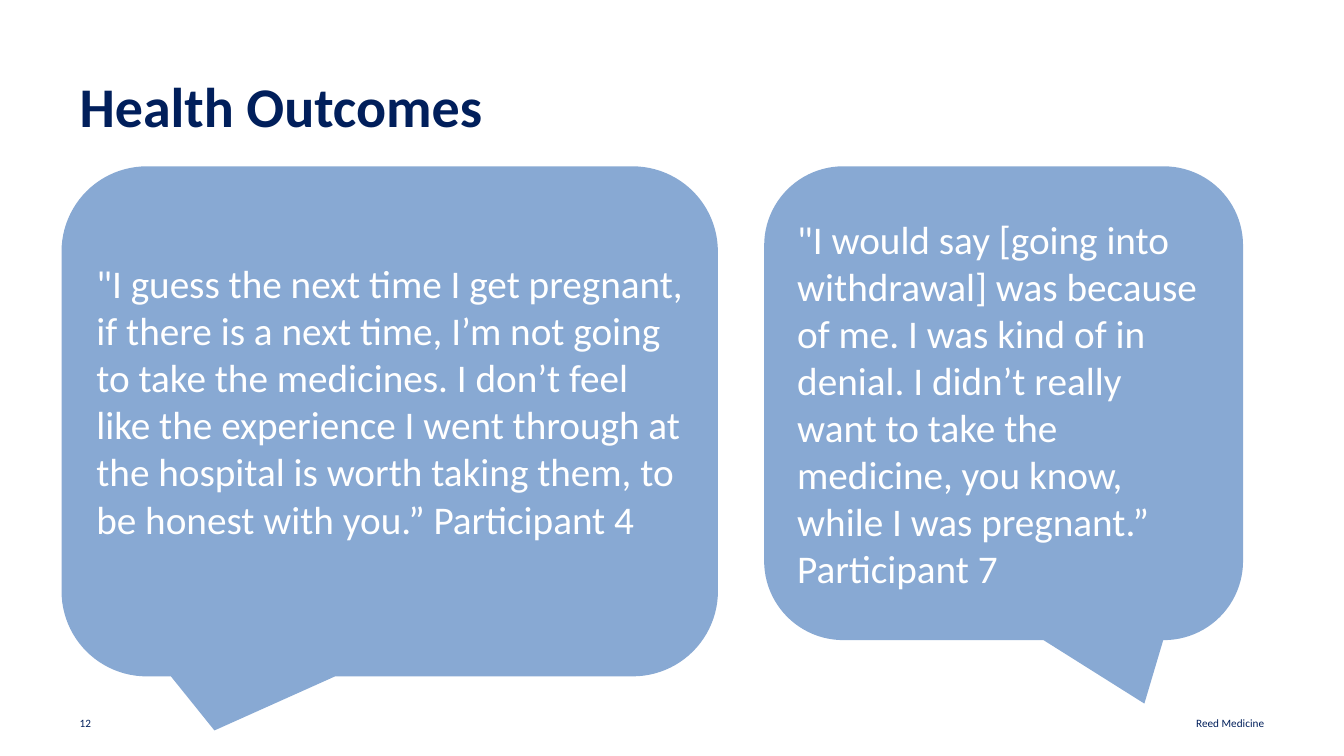
from dataclasses import dataclass

from pptx import Presentation
from pptx.dml.color import RGBColor
from pptx.enum.shapes import MSO_SHAPE
from pptx.enum.text import MSO_ANCHOR, PP_ALIGN
from pptx.shapes.autoshape import Shape
from pptx.slide import Slide
from pptx.util import Inches, Pt

# Grid: 100 columns by 100 rows over the whole slide
SLIDE_WIDTH = Inches(13.33)
SLIDE_HEIGHT = Inches(7.5)
COLUMN = SLIDE_WIDTH / 100
ROW = SLIDE_HEIGHT / 100


@dataclass(frozen=True)
class Theme:
    font: str = "Calibri"
    navy: RGBColor = RGBColor(0x01, 0x1F, 0x5B)
    bubble: RGBColor = RGBColor(0x88, 0xA9, 0xD3)
    white: RGBColor = RGBColor(0xFF, 0xFF, 0xFF)
    title_size: int = 40
    quote_size: int = 28
    footer_size: int = 8


@dataclass(frozen=True)
class Area:
    column: float
    row: float
    columns: float
    rows: float

    def box(self) -> tuple[int, int, int, int]:
        return (round(self.column * COLUMN), round(self.row * ROW),
                round(self.columns * COLUMN), round(self.rows * ROW))


@dataclass(frozen=True)
class Quote:
    text: str
    area: Area
    tail: tuple[float, float]  # tip, as shares of the bubble from its centre
    bottom_inset: float = 0.05


@dataclass(frozen=True)
class Label:
    text: str
    area: Area
    size: int
    bold: bool = False
    align: PP_ALIGN = PP_ALIGN.LEFT
    anchor: MSO_ANCHOR = MSO_ANCHOR.BOTTOM
    line_spacing: float = 1.0


THEME = Theme()
CORNER = 0.167
LEFT_MARGIN = 5.93
BUBBLE_TOP = 22
FOOTER_TOP, FOOTER_ROWS = 93.87, 2.67

LABELS = [
    Label("Reed Medicine", Area(74.27, FOOTER_TOP, 19.8, FOOTER_ROWS),
          THEME.footer_size, align=PP_ALIGN.RIGHT),
    Label("12", Area(LEFT_MARGIN, FOOTER_TOP, 3.23, FOOTER_ROWS), THEME.footer_size),
    Label("Health Outcomes", Area(LEFT_MARGIN, 10.53, 88.22, 8.13), THEME.title_size,
          bold=True, anchor=MSO_ANCHOR.TOP, line_spacing=0.9),
]

QUOTES = [
    Quote('"I guess the next time I get pregnant, if there is a next time, I’m not going '
          "to take the medicines. I don’t feel like the experience I went through at the "
          "hospital is worth taking them, to be honest with you.” Participant 4",
          Area(4.58, BUBBLE_TOP, 48.84, 67.47), (-0.267, 0.606), bottom_inset=0.46),
    Quote('"I would say [going into withdrawal] was because of me. I was kind of in denial. '
          "I didn’t really want to take the medicine, you know, while I was pregnant.” "
          "Participant 7",
          Area(56.86, BUBBLE_TOP, 35.63, 62.67), (0.294, 0.634)),
]


def write_text(shape: Shape, text: str, *, size: int, color: RGBColor, bold: bool = False,
               align: PP_ALIGN = PP_ALIGN.LEFT, anchor: MSO_ANCHOR = MSO_ANCHOR.MIDDLE,
               line_spacing: float = 1.0,
               insets: tuple[float, float, float, float] = (0, 0, 0, 0)) -> None:
    frame = shape.text_frame
    frame.word_wrap = True
    frame.vertical_anchor = anchor
    (frame.margin_left, frame.margin_top,
     frame.margin_right, frame.margin_bottom) = map(Inches, insets)
    paragraph = frame.paragraphs[0]
    paragraph.alignment = align
    paragraph.line_spacing = line_spacing
    run = paragraph.add_run()
    run.text = text
    run.font.name = THEME.font
    run.font.size = Pt(size)
    run.font.bold = bold
    run.font.color.rgb = color


def draw_label(slide: Slide, label: Label) -> None:
    shape = slide.shapes.add_textbox(*label.area.box())
    write_text(shape, label.text, size=label.size, color=THEME.navy, bold=label.bold,
               align=label.align, anchor=label.anchor, line_spacing=label.line_spacing)


def draw_quote(slide: Slide, quote: Quote) -> None:
    shape = slide.shapes.add_shape(MSO_SHAPE.ROUNDED_RECTANGULAR_CALLOUT, *quote.area.box())
    for index, value in enumerate((*quote.tail, CORNER)):
        shape.adjustments[index] = value
    shape.shadow.inherit = False
    shape.fill.solid()
    shape.fill.fore_color.rgb = THEME.bubble
    shape.line.fill.background()
    write_text(shape, quote.text, size=THEME.quote_size, color=THEME.white,
               insets=(0.1, 0.05, 0.1, quote.bottom_inset))


def main() -> None:
    presentation = Presentation()
    presentation.slide_width = SLIDE_WIDTH
    presentation.slide_height = SLIDE_HEIGHT
    slide = presentation.slides.add_slide(presentation.slide_layouts[6])

    # Title and footer
    for label in LABELS:
        draw_label(slide, label)

    # Participant quotes
    for quote in QUOTES:
        draw_quote(slide, quote)

    presentation.save("out.pptx")


if __name__ == "__main__":
    main()
